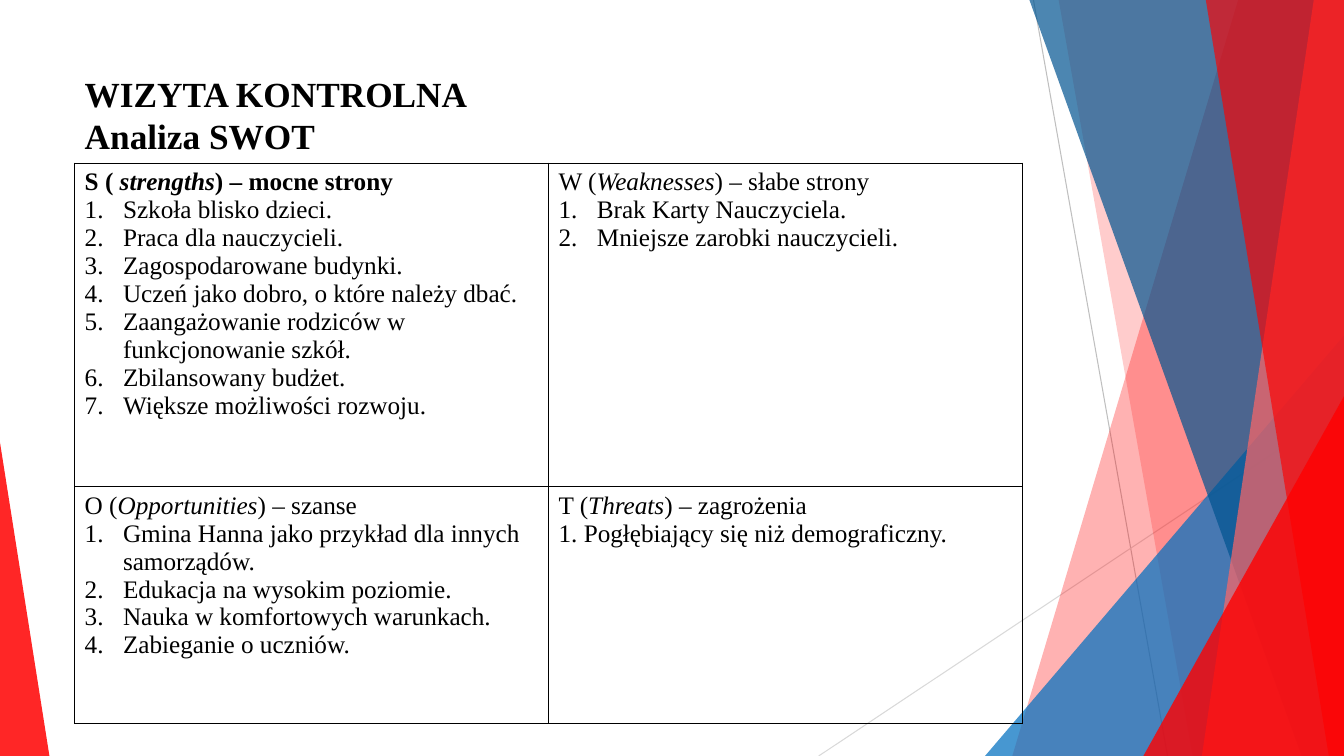
from lxml import etree
from pptx import Presentation
from pptx.dml.color import RGBColor
from pptx.enum.shapes import MSO_CONNECTOR, MSO_SHAPE
from pptx.enum.text import MSO_ANCHOR, PP_ALIGN
from pptx.oxml.ns import qn
from pptx.util import Inches, Pt

WIDTH, HEIGHT = 13.33, 7.5


def rgb(color):
    return RGBColor.from_string(color)


def add_text(paragraph, text, size=18, bold=False, italic=False, color="000000"):
    run = paragraph.add_run()
    run.text = text
    run.font.name = "Times New Roman"
    run.font.size = Pt(size)
    run.font.bold = bold
    run.font.italic = italic
    run.font.color.rgb = rgb(color)


prs = Presentation()
prs.slide_width, prs.slide_height = Inches(WIDTH), Inches(HEIGHT)
slide = prs.slides.add_slide(prs.slide_layouts[5])
shapes = slide.shapes

# Thin lines behind the facets
for x1, y1, x2, y2, color in [
    (10.25, 0, 11.58, HEIGHT, "BFBFBF"),
    (WIDTH, 4.03, 8.12, HEIGHT, "D9D9D9"),
]:
    ray = shapes.add_connector(
        MSO_CONNECTOR.STRAIGHT, Inches(x1), Inches(y1), Inches(x2), Inches(y2))
    ray.line.color.rgb = rgb(color)
    ray.line.width = Pt(0.75)
    etree.SubElement(ray._element.spPr, qn("a:effectLst"))

# Facets: a band runs from its top x to its bottom x and on to the right edge;
# a triangle has left, top, width and the place of its apex
facets = [
    ("band", (12.28, 10.04), "FF0000", 30),
    ("band", (10.5, 11.83), "FF0000", 20),
    ("triangle", (9.77, 3.33, 3.56, 1), "0070C0", 72),
    ("band", (10.21, 12.91), "005490", 70),
    ("band", (13.03, 11.92), "FF6666", 70),
    ("band", (11.96, 13.18), "FF0000", 65),
    ("triangle", (11.34, 3.93, 1.99, 1), "FF0000", 80),
    ("triangle", (0, 4.39, 0.49, 0), "FF0000", 85),
]
for kind, geometry, color, opacity in facets:
    if kind == "band":
        top_x, bottom_x = geometry
        outline = shapes.build_freeform(Inches(top_x), 0)
        outline.add_line_segments([
            (Inches(x), Inches(y))
            for x, y in [(WIDTH, 0), (WIDTH, HEIGHT), (bottom_x, HEIGHT)]])
        facet = outline.convert_to_shape()
    else:
        left, top, width, apex = geometry
        facet = shapes.add_shape(
            MSO_SHAPE.ISOSCELES_TRIANGLE, Inches(left), Inches(top),
            Inches(width), Inches(HEIGHT - top))
        facet.adjustments[0] = apex
    facet.shadow.inherit = False
    facet.line.fill.background()
    facet.fill.solid()
    facet.fill.fore_color.rgb = rgb(color)
    fill_color = facet._element.spPr.find(qn("a:solidFill"))[0]
    etree.SubElement(fill_color, qn("a:alpha"), val=str(opacity * 1000))

# Title, brought in front of the facets
title = shapes.title
title.left, title.top = Inches(0.74), Inches(0.67)
title.width, title.height = Inches(9.4), Inches(1.44)
title.text_frame.vertical_anchor = MSO_ANCHOR.TOP
heading = title.text_frame.paragraphs[0]
heading.alignment = PP_ALIGN.LEFT
heading.line_spacing = Pt(30)
add_text(heading, "WIZYTA KONTROLNA", size=25.2, bold=True)
heading.add_line_break()
add_text(heading, "Analiza SWOT", size=25.2, bold=True)
shapes._spTree.append(title._element)

# SWOT table: heading parts, bold heading, hanging indent, numbered points
swot = [
    [
        (("S ( ", "strengths", ") – mocne strony"), True, 0.38, [
            "Szkoła blisko dzieci.",
            "Praca dla nauczycieli.",
            "Zagospodarowane budynki.",
            "Uczeń jako dobro, o które należy dbać.",
            "Zaangażowanie rodziców w funkcjonowanie szkół.",
            "Zbilansowany budżet.",
            "Większe możliwości rozwoju.",
        ]),
        (("W (", "Weaknesses", ") – słabe strony"), False, 0.38, [
            "Brak Karty Nauczyciela.",
            "Mniejsze zarobki nauczycieli.",
        ]),
    ],
    [
        (("O (", "Opportunities", ") – szanse"), False, 0.38, [
            "Gmina Hanna jako przykład dla innych samorządów.",
            "Edukacja na wysokim poziomie.",
            "Nauka w komfortowych warunkach.",
            "Zabieganie o uczniów.",
        ]),
        (("T (", "Threats", ") – zagrożenia"), False, 0.25, [
            "Pogłębiający się niż demograficzny.",
        ]),
    ],
]
row_heights = [3.21, 2.35]
table = shapes.add_table(
    2, 2, Inches(0.74), Inches(1.62), Inches(9.4), Inches(sum(row_heights))).table
table.first_row = table.horz_banding = False
for row, height in zip(table.rows, row_heights):
    row.height = Inches(height)

for r, quadrants in enumerate(swot):
    for c, (parts, bold, indent, points) in enumerate(quadrants):
        cell = table.cell(r, c)
        cell_props = cell._tc.get_or_add_tcPr()
        for side in ("lnL", "lnR", "lnT", "lnB"):
            border = etree.SubElement(cell_props, qn(f"a:{side}"), w=str(Pt(1)))
            border_fill = etree.SubElement(border, qn("a:solidFill"))
            etree.SubElement(border_fill, qn("a:srgbClr"), val="000000")
        cell.fill.background()

        quadrant_heading = cell.text_frame.paragraphs[0]
        for part, italic in zip(parts, (False, True, False)):
            add_text(quadrant_heading, part, bold=bold, italic=italic)
        for point in points:
            item = cell.text_frame.add_paragraph()
            add_text(item, point)
            item_props = item._p.get_or_add_pPr()
            item_props.set("marL", str(Inches(indent)))
            item_props.set("indent", str(-Inches(indent)))
            etree.SubElement(item_props, qn("a:buFont"), typeface="+mj-lt")
            etree.SubElement(item_props, qn("a:buAutoNum"), type="arabicPeriod")

prs.save("out.pptx")
